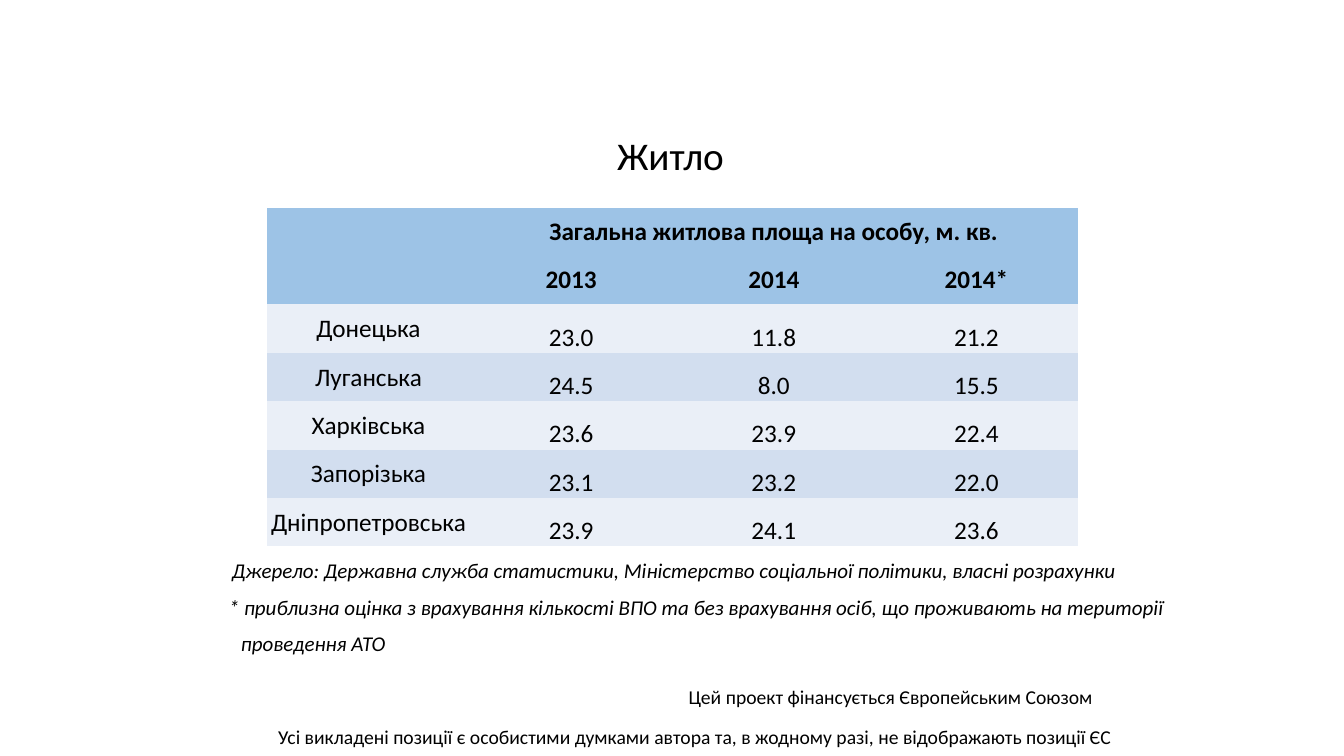
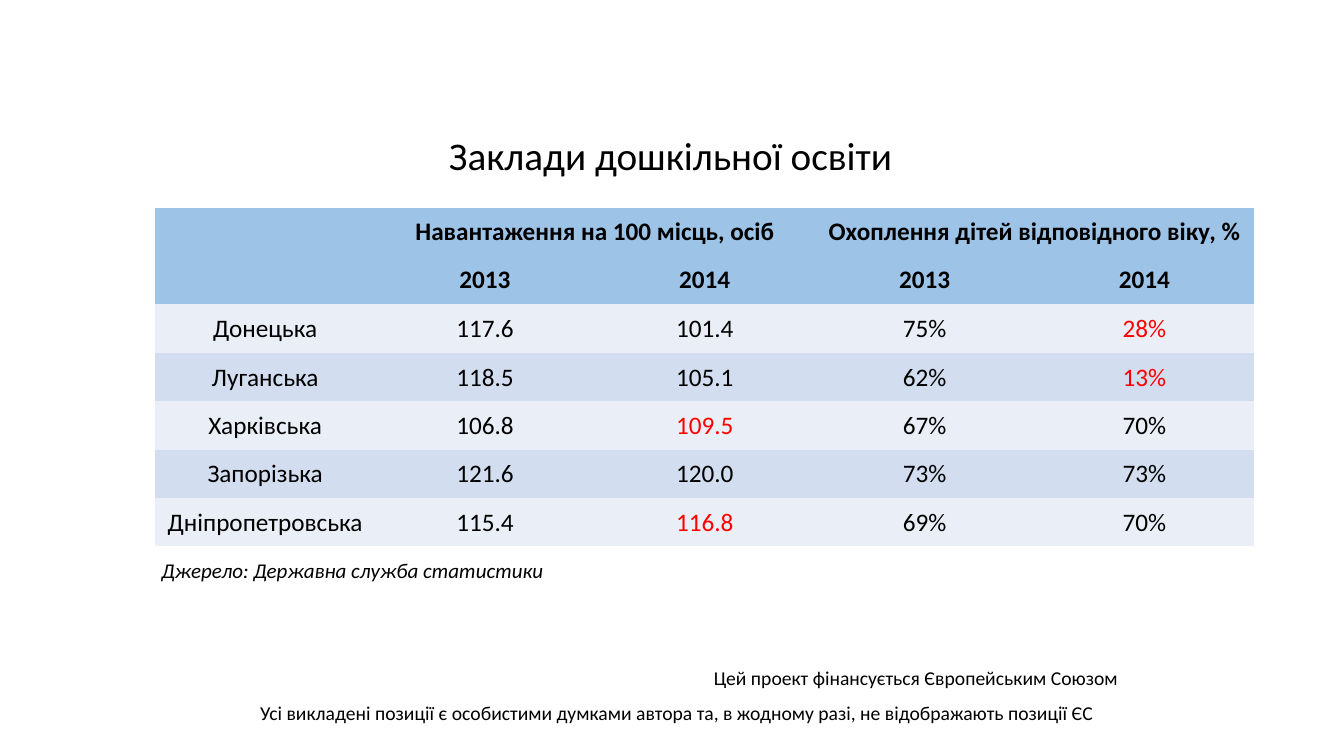
from pptx import Presentation
from pptx.dml.color import RGBColor
from pptx.enum.text import MSO_ANCHOR, PP_ALIGN
from pptx.util import Inches, Pt

CENTER, LEFT = PP_ALIGN.CENTER, PP_ALIGN.LEFT
MIDDLE, BOTTOM = MSO_ANCHOR.MIDDLE, MSO_ANCHOR.BOTTOM
FONT = "Calibri"
BLACK, RED, WHITE = "000000", "FF0000", "FFFFFF"
HEADER, BANDS = "9DC3E6", ("EAEFF7", "D2DEEF")
PLAIN_TABLE = "{2D5ABB26-0587-4C30-8999-92F81FD0307C}"
TABLE_TOP, ROW_H = 2.06, 0.48
NOTE_TOP = 5.56
FOOTER = ("Цей проект фінансується Європейським Союзом",
          "Усі викладені позиції є особистими думками автора та, "
          "в жодному разі, не відображають позиції ЄС")
REGIONS = ("Донецька", "Луганська", "Харківська", "Запорізька", "Дніпропетровська")


def rgb(value):
    """Turn a hex string into a colour."""
    return RGBColor.from_string(value)


def add_run(p, text, size, color=BLACK, bold=False, italic=False):
    """Add one formatted run to a paragraph."""
    r = p.add_run()
    r.text = text
    r.font.name, r.font.size = FONT, Pt(size)
    r.font.bold, r.font.italic = bold, italic
    r.font.color.rgb = rgb(color)


def add_text(s, x, y, w, h, lines, size, align=LEFT, italic=False, gap=10):
    """Add a text box of (text, left indent) lines without insets."""
    tf = s.shapes.add_textbox(Inches(x), Inches(y), Inches(w), Inches(h)).text_frame
    tf.word_wrap = True
    tf.margin_left = tf.margin_right = tf.margin_top = tf.margin_bottom = 0
    for i, (text, indent) in enumerate(lines):
        p = tf.add_paragraph() if i else tf.paragraphs[0]
        p.alignment, p.line_spacing = align, 0.9
        p.space_before = Pt(gap if i else 0)
        p._p.get_or_add_pPr().set("marL", str(Inches(indent)))
        add_run(p, text, size, italic=italic)


def add_title(s, text):
    """Add the centred slide title."""
    add_text(s, 0.75, 1.36, 11.8, 0.5, [(text, 0)], 28, CENTER)


def add_footer(s, x, y, indent, gap):
    """Add the two funding lines, the first one indented."""
    add_text(s, x, y, 9, 0.6, zip(FOOTER, (indent, 0)), 14, gap=gap)


def fill_cell(cell, text, fill, color=BLACK, bold=False, anchor=MIDDLE):
    """Set the fill and centred text of a table cell."""
    cell.fill.solid()
    cell.fill.fore_color.rgb = rgb(fill)
    cell.vertical_anchor = anchor
    if not bold:
        cell.margin_left = cell.margin_right = cell.margin_top = Inches(0.01)
        cell.margin_bottom = 0
    if text:
        p = cell.text_frame.paragraphs[0]
        p.alignment = CENTER
        add_run(p, text, 18, color, bold)


def add_region_table(s, x, col_w, groups, years, values, anchor=MIDDLE, red=()):
    """Add a table of regions under grouped year columns."""
    cols, rows = len(years) + 1, len(values) + 2
    t = s.shapes.add_table(rows, cols, Inches(x), Inches(TABLE_TOP),
                           Inches(col_w * cols), Inches(ROW_H * rows)).table
    t._tbl.tblPr[0].text = PLAIN_TABLE
    t.first_row = t.horz_banding = False
    for col in t.columns:
        col.width = Inches(col_w)
    for row in t.rows:
        row.height = Inches(ROW_H)
    span = len(years) // len(groups)
    heads = [""] * cols
    heads[1::span] = groups
    for c, (group, year) in enumerate(zip(heads, ("", *years))):
        fill_cell(t.cell(0, c), group, HEADER, bold=True)
        fill_cell(t.cell(1, c), year, HEADER, bold=True)
    for c in range(1, cols, span):
        t.cell(0, c).merge(t.cell(0, c + span - 1))
    for i, (region, numbers) in enumerate(zip(REGIONS, values)):
        band = BANDS[i % 2]
        fill_cell(t.cell(i + 2, 0), region, band)
        for c, number in enumerate(numbers, 1):
            color = RED if (region, c) in red else BLACK
            fill_cell(t.cell(i + 2, c), number, band, color, anchor=anchor)


def add_slide(prs, title):
    """Add a white blank slide with a title."""
    s = prs.slides.add_slide(prs.slide_layouts[6])
    s.background.fill.solid()
    s.background.fill.fore_color.rgb = rgb(WHITE)
    add_title(s, title)
    return s


def housing_slide(prs):
    """Build the slide on housing area per person."""
    s = add_slide(prs, "Житло")
    add_region_table(
        s, 2.65, 2.01, ["Загальна житлова площа на особу, м. кв."],
        ("2013", "2014", "2014*"),
        [("23.0", "11.8", "21.2"), ("24.5", "8.0", "15.5"), ("23.6", "23.9", "22.4"),
         ("23.1", "23.2", "22.0"), ("23.9", "24.1", "23.6")], BOTTOM)
    add_text(s, 2.27, NOTE_TOP, 10, 1, [
        ("Джерело: Державна служба статистики, Міністерство соціальної політики, "
         "власні розрахунки", 0.03),
        ("* приблизна оцінка з врахування кількості ВПО та без врахування осіб, "
         "що проживають на території", 0),
        ("проведення АТО", 0.12)], 15, italic=True)
    add_footer(s, 2.76, 6.82, 4.07, 13.7)


def preschool_slide(prs):
    """Build the slide on preschool load and coverage."""
    s = add_slide(prs, "Заклади дошкільної освіти")
    add_region_table(
        s, 1.54, 2.18,
        ["Навантаження на 100 місць, осіб", "Охоплення дітей відповідного віку, %"],
        ("2013", "2014") * 2,
        [("117.6", "101.4", "75%", "28%"), ("118.5", "105.1", "62%", "13%"),
         ("106.8", "109.5", "67%", "70%"), ("121.6", "120.0", "73%", "73%"),
         ("115.4", "116.8", "69%", "70%")],
        red={("Донецька", 4), ("Луганська", 4), ("Харківська", 2),
             ("Дніпропетровська", 2)})
    add_text(s, 1.6, NOTE_TOP, 10, 0.3,
             [("Джерело: Державна служба статистики", 0)], 15, italic=True)
    add_footer(s, 2.58, 6.63, 4.5, 10)


def main():
    """Build and save the presentation."""
    prs = Presentation()
    prs.slide_width, prs.slide_height = Inches(13.33), Inches(7.5)
    housing_slide(prs)
    preschool_slide(prs)
    prs.save("out.pptx")


if __name__ == "__main__":
    main()
